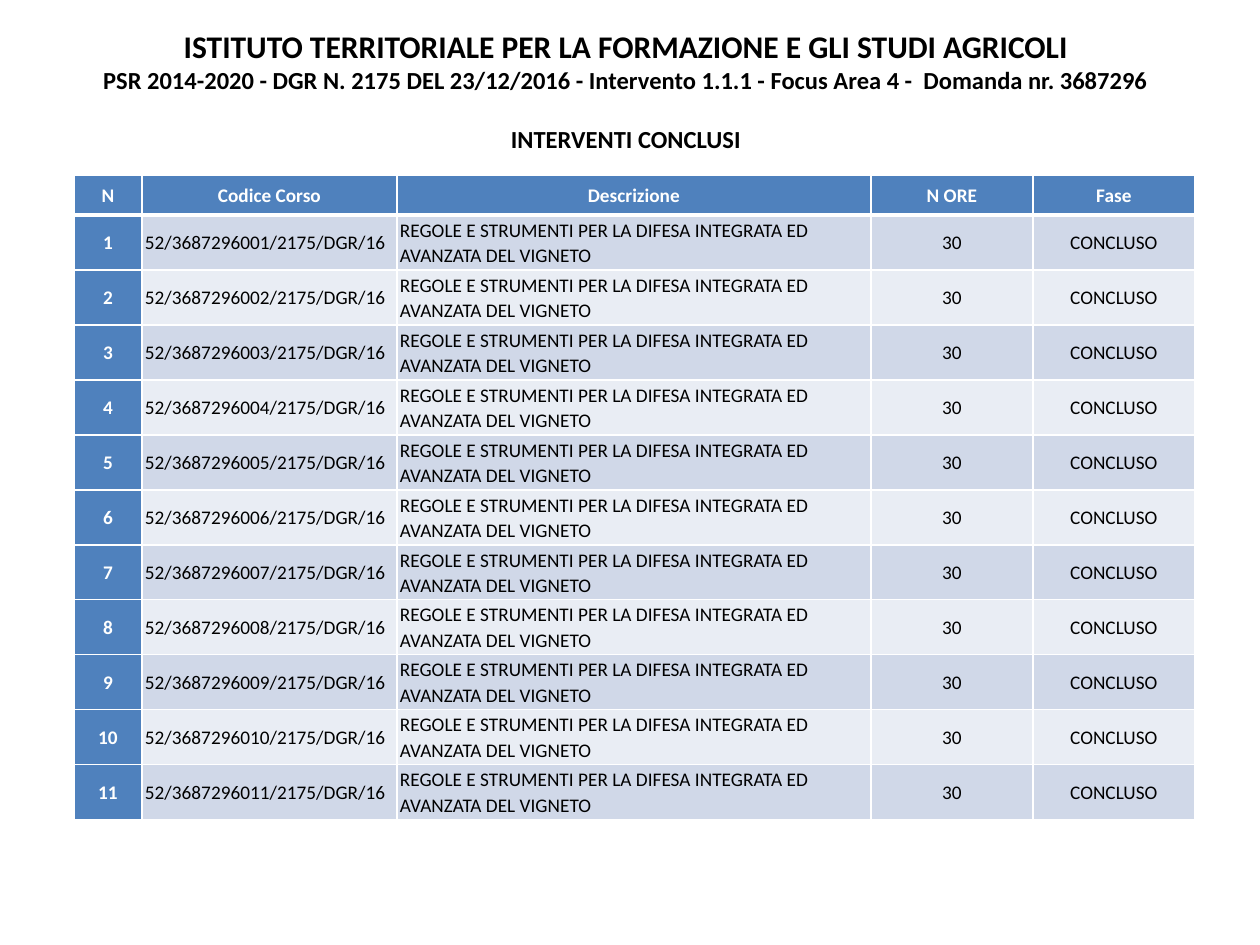
import pptx
import pptx.util
import pptx.dml.color
import pptx.enum.text
import pptx.oxml

# Content: heading lines as (text, size, space before)
HEADING = [
    ("ISTITUTO TERRITORIALE PER LA FORMAZIONE E GLI STUDI AGRICOLI", 18, 0),
    ("PSR 2014-2020 - DGR N. 2175 DEL 23/12/2016 - Intervento 1.1.1 - Focus Area 4 -  Domanda nr. 3687296", 14, 0),
    ("INTERVENTI CONCLUSI", 14, 17),
]
HEADER = ["N", "Codice Corso", "Descrizione", "N ORE", "Fase"]
COURSE = "REGOLE E STRUMENTI PER LA DIFESA INTEGRATA ED AVANZATA DEL VIGNETO"
COURSES = [[str(n), f"52/3687296{n:03}/2175/DGR/16", COURSE, "30", "CONCLUSO"]
           for n in range(1, 12)]

# Layout in px
PX = 914400 / 126
HEADING_BOX = (59, 49, 1134, 82)
TABLE_LEFT, TABLE_TOP = 74, 175
COLUMNS = [68, 255, 474, 162, 162]
HEADER_H, ROW_H = 40, 55
LEFT_COLUMNS = (1, 2)

BLUE, BANDS = "4F81BD", ("D0D8E8", "E9EDF4")
WHITE, BLACK = "FFFFFF", "000000"
ALIGN = pptx.enum.text.PP_ALIGN
MIDDLE = pptx.enum.text.MSO_ANCHOR.MIDDLE


def px(n):
    return pptx.util.Emu(round(n * PX))


def rgb(value):
    return pptx.dml.color.RGBColor.from_string(value)


def set_all(obj, values):
    for name, value in values.items():
        setattr(obj, name, value)


def write(p, text, size, color, bold, align, **spacing):
    set_all(p, {"alignment": align, **spacing})
    r = p.add_run()
    r.text = text
    set_all(r.font, {"name": "Calibri", "size": pptx.util.Pt(size), "bold": bold})
    r.font.color.rgb = rgb(color)


def add_borders(cell, widths):
    tc_pr = cell._tc.get_or_add_tcPr()
    for i, (side, width) in enumerate(widths.items()):
        tc_pr.insert(i, pptx.oxml.parse_xml(
            f'<a:ln{side} xmlns:a="http://schemas.openxmlformats.org/drawingml/2006/main"'
            f' w="{pptx.util.Pt(width)}"><a:solidFill><a:srgbClr val="{WHITE}"/>'
            f'</a:solidFill></a:ln{side}>'))


prs = pptx.Presentation()
prs.slide_width, prs.slide_height = px(1260), px(945)
s = prs.slides.add_slide(prs.slide_layouts[5])

# Heading
title = s.shapes.title
set_all(title, dict(zip(("left", "top", "width", "height"), map(px, HEADING_BOX))))
tf = title.text_frame
set_all(tf, {"word_wrap": True, "vertical_anchor": MIDDLE,
             "auto_size": pptx.enum.text.MSO_AUTO_SIZE.NONE})
for i, (text, size, before) in enumerate(HEADING):
    p = tf.add_paragraph() if i else tf.paragraphs[0]
    write(p, text, size, BLACK, True, ALIGN.CENTER, space_before=pptx.util.Pt(before))

# Course table
rows = [HEADER] + COURSES
table = s.shapes.add_table(
    len(rows), len(COLUMNS), px(TABLE_LEFT), px(TABLE_TOP),
    px(sum(COLUMNS)), px(HEADER_H + ROW_H * len(COURSES))).table
for column, width in zip(table.columns, COLUMNS):
    column.width = px(width)
for i, row in enumerate(rows):
    table.rows[i].height = px(ROW_H if i else HEADER_H)
    for j, text in enumerate(row):
        cell = table.cell(i, j)
        strong = i == 0 or j == 0
        set_all(cell, {"margin_left": px(3), "margin_right": px(3), "margin_top": 0,
                       "margin_bottom": 0, "vertical_anchor": MIDDLE})
        cell.fill.solid()
        cell.fill.fore_color.rgb = rgb(BLUE if strong else BANDS[(i - 1) % 2])
        add_borders(cell, {"L": 1, "R": 1, "T": 3 if i == 1 else 1, "B": 1 if i else 3})
        write(cell.text_frame.paragraphs[0], text, 11, WHITE if strong else BLACK, strong,
              ALIGN.LEFT if i and j in LEFT_COLUMNS else ALIGN.CENTER, line_spacing=1.07)

prs.save("out.pptx")
